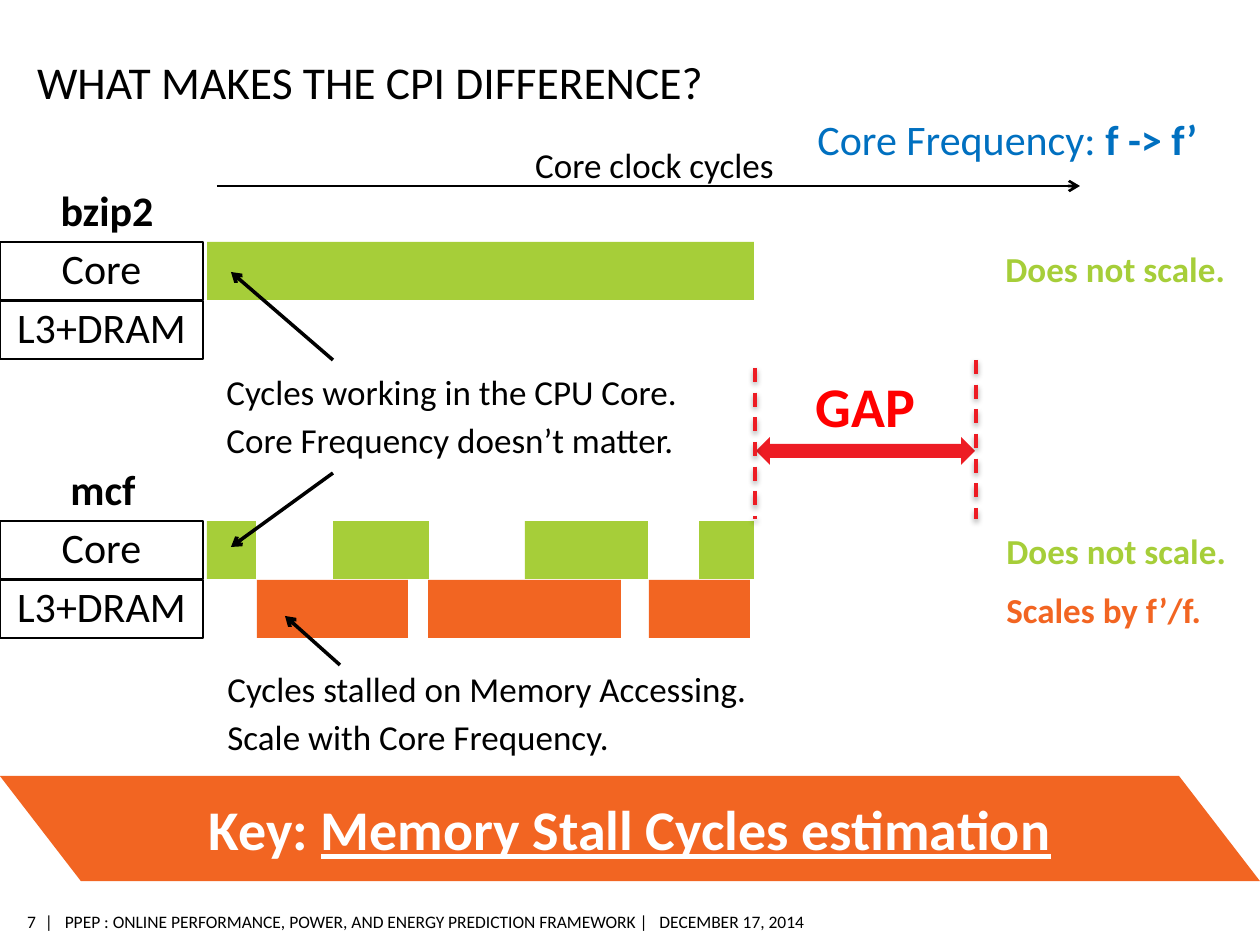
"""Build the slide that compares core and memory cycles of bzip2 and mcf."""
import dataclasses

import lxml.etree
import pptx
import pptx.dml.color
import pptx.enum.dml
import pptx.enum.shapes
import pptx.enum.text
import pptx.oxml.ns
import pptx.util

SHAPE = pptx.enum.shapes.MSO_SHAPE
ALIGN = pptx.enum.text.PP_ALIGN
ANCHOR = pptx.enum.text.MSO_ANCHOR
qn = pptx.oxml.ns.qn


@dataclasses.dataclass(frozen=True)
class Theme:
    font: str = "Calibri"
    ink: str = "000000"
    paper: str = "FFFFFF"
    core: str = "A6CE39"
    memory: str = "F26522"
    frequency: str = "0070C0"
    gap_text: str = "FF0000"
    gap_mark: str = "ED1C24"
    title: int = 26
    key: int = 32
    label: int = 24
    note: int = 20
    footer: int = 10


THEME = Theme()
PX = 914400 / 126
ROW_H, LABEL_W = 58, 203
ROW_STEP = 59

TITLE = "WHAT MAKES THE CPI DIFFERENCE?"
ROWS = ["Core", "L3+DRAM"]
ROW_COLORS = [THEME.core, THEME.memory]
BENCHMARKS = [
    {"name": "bzip2", "left": 42, "top": 242, "bars": [[(207, 547)], []]},
    {"name": "mcf", "left": 38, "top": 521, "bars": [
        [(207, 49), (333, 96), (525, 123), (699, 55)],
        [(257, 151), (428, 193), (649, 101)]]},
]
NOTES = [
    ("Core clock cycles", (223, 142, 863, 50), {"align": ALIGN.CENTER}),
    ("Cycles working in the CPU Core.\nCore Frequency doesn’t matter.", (214, 368, 591, 100), {}),
    ("Cycles stalled on Memory Accessing.\nScale with Core Frequency.", (215, 665, 590, 100), {}),
    ("Core Frequency: ", (805, 113, 422, 58),
     {"size": THEME.label, "color": THEME.frequency, "tail": ("f -> f’", {"bold": True})}),
    ("Does not scale.", (993, 246, 267, 50), {"color": THEME.core, "bold": True}),
    ("Does not scale.", (994, 528, 266, 50), {"color": THEME.core, "bold": True}),
    ("Scales by f’/f.", (994, 587, 266, 50), {"color": THEME.memory, "bold": True}),
]
AXIS = (217, 186, 1080, 186)
POINTERS = [(340, 665, 285, 616), (333, 360, 231, 272), (333, 473, 231, 547)]
GAP_EDGES = [(755, 368, 755, 519), (976, 360, 976, 519)]
FOOTER = [
    ("|\u00a0\u00a0 PPEP : ONLINE PERFORMANCE, POWER, AND ENERGY PREDICTION FRAMEWORK |"
     "\u00a0\u00a0 DECEMBER 17, 2014".replace("\u00a0", " "), (45, 905, 770, 33), ALIGN.LEFT),
    ("7", (16, 905, 20, 33), ALIGN.RIGHT),
]
FOOTER[0] = ("|   PPEP : ONLINE PERFORMANCE, POWER, AND ENERGY PREDICTION FRAMEWORK |   DECEMBER 17, 2014",
             *FOOTER[0][1:])


def emu(*lengths):
    return [round(n * PX) for n in lengths]


def rgb(color):
    return pptx.dml.color.RGBColor.from_string(color)


def write(tf, text, size=THEME.note, color=THEME.ink, bold=False, align=ALIGN.LEFT,
          anchor=ANCHOR.MIDDLE, leading=0.9, before=3, after=3, wrap=True, insets=None, tail=None):
    tf.word_wrap = wrap
    tf.auto_size = pptx.enum.text.MSO_AUTO_SIZE.NONE
    tf.vertical_anchor = anchor
    if insets:
        tf.margin_left, tf.margin_top, tf.margin_right, tf.margin_bottom = emu(*insets)
    for i, line in enumerate(text.split("\n")):
        p = tf.add_paragraph() if i else tf.paragraphs[0]
        p.alignment = align
        p.line_spacing = leading
        p.space_before = pptx.util.Pt(before if i else 0)
        p.space_after = pptx.util.Pt(after)
        for part, extra in [(line, {})] + ([tail] if tail else []):
            r = p.add_run()
            r.text = part
            r.font.name, r.font.size = THEME.font, pptx.util.Pt(size)
            r.font.color.rgb = rgb(color)
            r.font.bold = extra.get("bold", bold)
            r.font.underline = extra.get("underline", False)


def add_text(shapes, text, box, **fmt):
    tb = shapes.add_textbox(*emu(*box))
    write(tb.text_frame, text, **fmt)


def add_block(shapes, box, fill, kind=SHAPE.RECTANGLE, outline=None):
    sp = shapes.add_shape(kind, *emu(*box))
    sp.shadow.inherit = False
    sp.fill.solid()
    sp.fill.fore_color.rgb = rgb(fill)
    if outline:
        sp.line.color.rgb = rgb(outline)
        sp.line.width = pptx.util.Pt(1.5)
    else:
        sp.line.fill.background()
    return sp


def add_line(shapes, ends, color=THEME.ink, width=2, arrow=True, shadow=False):
    cx = shapes.add_connector(pptx.enum.shapes.MSO_CONNECTOR.STRAIGHT, *emu(*ends))
    cx.line.color.rgb = rgb(color)
    cx.line.width = pptx.util.Pt(width)
    if arrow:
        lxml.etree.SubElement(cx.line._get_or_add_ln(), qn("a:tailEnd"), type="arrow")
    else:
        cx.line.dash_style = pptx.enum.dml.MSO_LINE.DASH
    effects = lxml.etree.SubElement(cx._element.spPr, qn("a:effectLst"))
    if shadow:
        outer = lxml.etree.SubElement(effects, qn("a:outerShdw"), blurRad="40000", dist="20000",
                                      dir="5400000", rotWithShape="0")
        tint = lxml.etree.SubElement(outer, qn("a:srgbClr"), val=THEME.ink)
        lxml.etree.SubElement(tint, qn("a:alpha"), val="38000")


def add_benchmark(shapes, name, left, top, bars):
    label = {"size": THEME.label, "align": ALIGN.CENTER}
    heading = add_block(shapes, (left, top - ROW_H, 130, ROW_H), THEME.paper)
    write(heading.text_frame, name, bold=True, **label)
    for i, (row, color) in enumerate(zip(ROWS, ROW_COLORS)):
        y = top + i * ROW_STEP
        cell = add_block(shapes, (0, y, LABEL_W, ROW_H), THEME.paper, outline=THEME.ink)
        write(cell.text_frame, row, **label)
        for x, width in bars[i]:
            add_block(shapes, (x, y, width, ROW_H), color)


def add_gap(shapes):
    add_text(shapes, "GAP", (757, 372, 217, 74), size=THEME.key, color=THEME.gap_text,
             bold=True, align=ALIGN.CENTER)
    add_block(shapes, (756, 437, 219, 28), THEME.gap_mark, SHAPE.LEFT_RIGHT_ARROW)
    for ends in GAP_EDGES:
        add_line(shapes, ends, THEME.gap_mark, arrow=False, shadow=True)


def add_key(shapes):
    banner = add_block(shapes, (0, 776, 1260, 105), THEME.memory, SHAPE.PARALLELOGRAM)
    banner.adjustments[0] = 0.77
    banner._element.spPr.xfrm.set("flipH", "1")
    write(banner.text_frame, "Key: ", size=THEME.key, color=THEME.paper, bold=True,
          align=ALIGN.CENTER, leading=1, after=4,
          tail=("Memory Stall Cycles estimation", {"bold": True, "underline": True}))


def main():
    prs = pptx.Presentation()
    prs.slide_width, prs.slide_height = emu(1260, 945)
    s = prs.slides.add_slide(prs.slide_layouts[5])
    title = s.shapes.title
    title.left, title.top, title.width, title.height = emu(37, 43, 1058, 66)
    write(title.text_frame, TITLE, size=THEME.title, anchor=ANCHOR.BOTTOM, leading=1,
          after=0, insets=(0, 6, 0, 0))
    for benchmark in BENCHMARKS:
        add_benchmark(s.shapes, **benchmark)
    add_line(s.shapes, AXIS, width=1.5)
    for text, box, fmt in NOTES:
        add_text(s.shapes, text, box, **fmt)
    add_key(s.shapes)
    for ends in POINTERS:
        add_line(s.shapes, ends)
    add_gap(s.shapes.add_group_shape().shapes)
    for text, box, align in FOOTER:
        add_text(s.shapes, text, box, size=THEME.footer, align=align, leading=1, after=0,
                 wrap=False, insets=(0, 5, 0, 5))
    prs.save("out.pptx")


if __name__ == "__main__":
    main()
